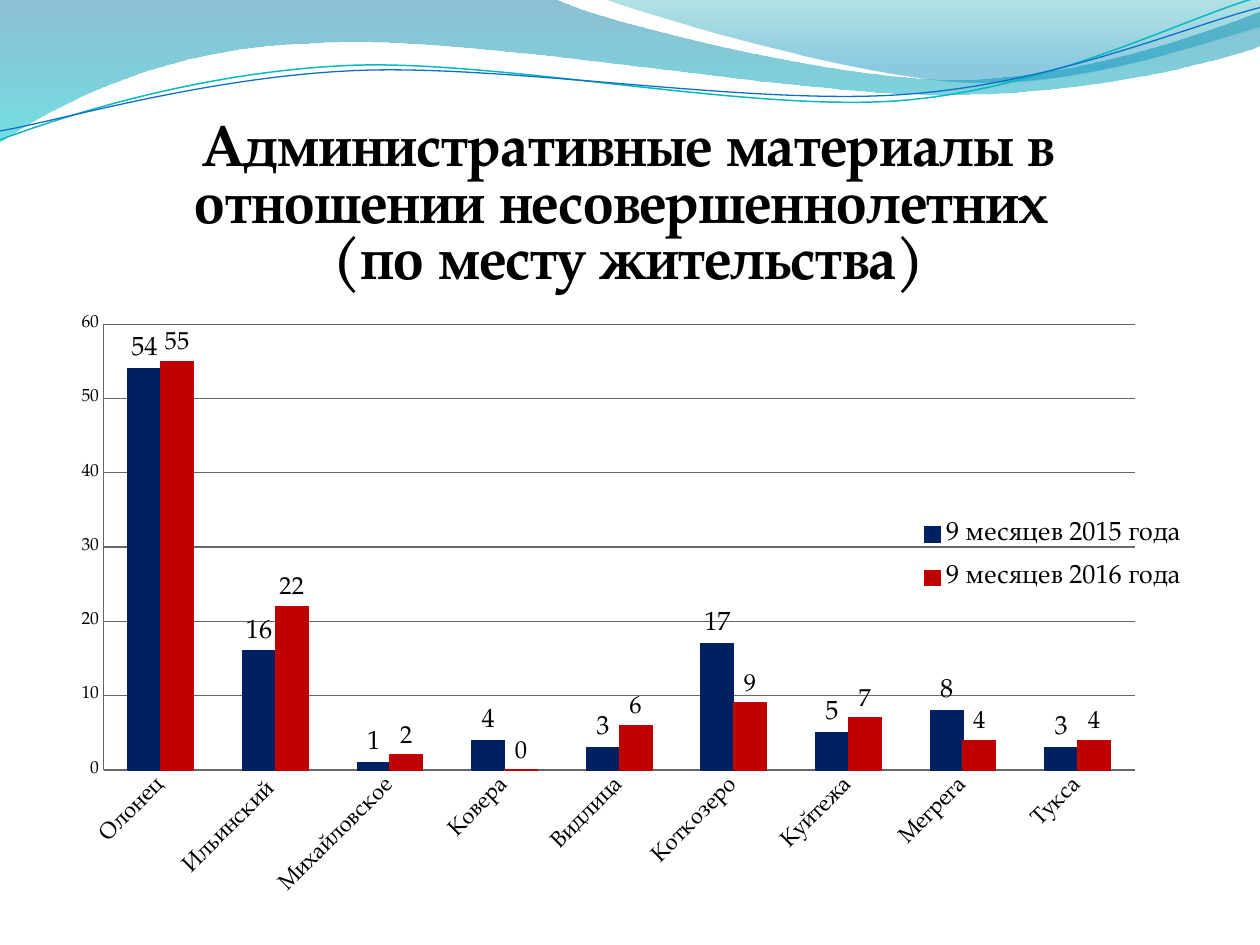
from dataclasses import dataclass
from lxml.etree import SubElement
from pptx import Presentation
from pptx.chart.data import CategoryChartData as Data
from pptx.dml.color import RGBColor as Rgb
from pptx.enum.chart import XL_CHART_TYPE as Kind, XL_LABEL_POSITION as Spot
from pptx.enum.chart import XL_LEGEND_POSITION as Side, XL_TICK_MARK as Tick
from pptx.oxml.ns import qn
from pptx.util import Cm, Pt

Point = tuple[float, float]


@dataclass(frozen=True)
class Theme:
    font: str = "TeX Gyre Pagella"
    ink: str = "000000"
    grid: str = "666666"
    title: int = 33
    key: int = 15
    names: int = 13
    scale: int = 10


@dataclass(frozen=True)
class Stop:
    at: float
    color: str
    alpha: int


@dataclass(frozen=True)
class Wave:
    """Outline in inches: one point is a line, three points are a curve."""
    start: Point
    steps: list[tuple[Point, ...]]
    stops: tuple[Stop, ...] = ()
    color: str = ""
    width: float = 0


@dataclass(frozen=True)
class Year:
    name: str
    vals: tuple[int, ...]
    color: str
    size: int


THEME = Theme()
WAVES = [
    Wave((0, 0), [
        ((4.4, -0.01),),
        ((4.76, 0.17), (6.64, 0.63), (7.58, 0.63)),
        ((8.53, 0.63), (9.58, 0.26), (10, 0.09)),
        ((10.01, 0.36),),
        ((9.83, 0.44), (8.7, 0.76), (7.46, 0.75)),
        ((6.22, 0.75), (3.82, 0.28), (2.57, 0.34)),
        ((1.29, 0.36), (0.46, 0.83), (-0.01, 1.13)),
    ], stops=(Stop(0, "0074A1", 45), Stop(1, "00C6CF", 55))),
    Wave((4.79, -0.01), [
        ((5.09, 0.11), (6.82, 0.62), (7.69, 0.65)),
        ((8.56, 0.69), (9.61, 0.32), (10, 0.21)),
        ((10, 0),),
    ], stops=(Stop(0, "00A1A9", 30), Stop(0.8, "008BBF", 45))),
    Wave((0, 1.11), [
        ((0.48, 0.93), (1.58, 0.57), (2.77, 0.52)),
        ((3.95, 0.47), (5.93, 0.89), (7.13, 0.8)),
        ((8.33, 0.71), (9.38, 0.15), (9.98, -0.02)),
    ], color="0AB8BF", width=0.85),
    Wave((0, 1.04), [
        ((0.47, 0.96), (1.64, 0.61), (2.83, 0.56)),
        ((4.03, 0.51), (5.97, 0.84), (7.17, 0.75)),
        ((8.36, 0.67), (9.41, 0.21), (10, 0.06)),
    ], color="0F6FC6", width=0.75),
]
TITLE = ("Административные материалы в отношении несовершеннолетних \n"
         "(по месту жительства)")
TOWNS = ["Олонец", "Ильинский ", "Михайловское", "Ковера", "Видлица",
         "Коткозеро", "Куйтежа", "Мегрега", "Тукса"]
YEARS = [
    Year("9 месяцев 2015 года", (54, 16, 1, 4, 3, 17, 5, 8, 3), "002060", 15),
    Year("9 месяцев 2016 года", (55, 22, 2, 0, 6, 9, 7, 4, 4), "C00000", 14),
]


def paint(color: str) -> Rgb:
    return Rgb.from_string(color)


def to_cm(point: Point) -> tuple[Cm, Cm]:
    x, y = point
    return Cm(x * 2.54), Cm(y * 2.54)


def bend(shape, steps: list[tuple[Point, ...]]) -> None:
    """Swap the straight segments for curves where a step has handles."""
    route = next(shape._element.iter(qn("a:path")))
    for node, step in zip(route.findall(qn("a:lnTo")), steps):
        if len(step) == 1:
            continue
        curve = SubElement(route, qn("a:cubicBezTo"))
        for x, y in map(to_cm, step):
            SubElement(curve, qn("a:pt"), x=str(x - shape.left),
                       y=str(y - shape.top))
        route.replace(node, curve)


def draw_wave(slide, wave: Wave) -> None:
    pen = slide.shapes.build_freeform(*to_cm(wave.start))
    pen.add_line_segments([to_cm(step[-1]) for step in wave.steps],
                          close=bool(wave.stops))
    shape = pen.convert_to_shape()
    bend(shape, wave.steps)
    shape.shadow.inherit = False
    if not wave.stops:
        shape.fill.background()
        shape.line.color.rgb = paint(wave.color)
        shape.line.width = Pt(wave.width)
        return
    shape.line.fill.background()
    shape.fill.gradient()
    shape.fill.gradient_angle = 270
    for slot, stop in zip(shape.fill.gradient_stops, wave.stops):
        slot.position = stop.at
        slot.color.rgb = paint(stop.color)
        tint = slot._gs.find(qn("a:srgbClr"))
        SubElement(tint, qn("a:alpha"), val=str(stop.alpha * 1000))


def place(node, index: int, box: tuple, inner: bool = False) -> None:
    """Fix a chart part at a box given as shares of the chart."""
    for old in node.findall(qn("c:layout")):
        node.remove(old)
    frame = SubElement(node, qn("c:layout"))
    node.insert(index, frame)
    manual = SubElement(frame, qn("c:manualLayout"))
    if inner:
        SubElement(manual, qn("c:layoutTarget"), val="inner")
    for tag in ("xMode", "yMode"):
        SubElement(manual, qn(f"c:{tag}"), val="edge")
    for tag, share in zip("xywh", box):
        SubElement(manual, qn(f"c:{tag}"), val=str(share))


def style_axes(chart) -> None:
    names, scale = chart.category_axis, chart.value_axis
    for axis, size in ((names, THEME.names), (scale, THEME.scale)):
        axis.major_tick_mark = axis.minor_tick_mark = Tick.NONE
        axis.tick_labels.font.size = Pt(size)
        axis.format.line.color.rgb = paint(THEME.grid)
        axis.format.line.width = Pt(0.75)
    turn = names._element.find(qn("c:txPr")).find(qn("a:bodyPr"))
    turn.set("rot", "-2700000")
    turn.set("vert", "horz")
    scale.minimum_scale, scale.maximum_scale, scale.major_unit = 0, 60, 10
    grid = scale.major_gridlines.format.line
    grid.color.rgb = paint(THEME.grid)
    grid.width = Pt(0.75)


def draw_chart(slide) -> None:
    data = Data()
    data.categories = TOWNS
    for year in YEARS:
        data.add_series(year.name, year.vals)
    chart = slide.shapes.add_chart(
        Kind.COLUMN_CLUSTERED, Cm(-0.05), Cm(1.92), Cm(25.45), Cm(16.61),
        data).chart
    chart.font.name = THEME.font
    chart.font.size = Pt(THEME.scale)
    chart.font.color.rgb = paint(THEME.ink)

    # Heading
    chart.has_title = True
    chart.chart_title.include_in_layout = False
    text = chart.chart_title.text_frame
    text.text = TITLE
    for line in text.paragraphs:
        line.font.name = THEME.font
        line.font.size = Pt(THEME.title)
        line.font.bold = True
        line.font.color.rgb = paint(THEME.ink)

    # Columns and their values
    plot = chart.plots[0]
    plot.gap_width, plot.overlap = 150, 0
    plot.vary_by_categories = False
    for bars, year in zip(plot.series, YEARS):
        bars.format.fill.solid()
        bars.format.fill.fore_color.rgb = paint(year.color)
        bars.format.line.color.rgb = paint(year.color)
        bars.format.line.width = Pt(0.75)
        labels = bars.data_labels
        labels.show_value = True
        labels.position = Spot.OUTSIDE_END
        labels.font.size = Pt(year.size)
        labels.font.name = THEME.font
        labels.font.color.rgb = paint(THEME.ink)
    style_axes(chart)

    # Legend and plot positions
    chart.has_legend = True
    chart.legend.position = Side.RIGHT
    chart.legend.include_in_layout = False
    chart.legend.font.size = Pt(THEME.key)
    place(chart.legend._element, 1, (0.726, 0.497, 0.22, 0.125))
    area = plot._element.getparent()
    place(area, 0, (0.084, 0.278, 0.817, 0.541), inner=True)


def main() -> None:
    deck = Presentation()
    deck.slide_width, deck.slide_height = Cm(25.4), Cm(19.05)
    slide = deck.slides.add_slide(deck.slide_layouts[6])
    # Waves along the top edge
    for wave in WAVES:
        draw_wave(slide, wave)
    draw_chart(slide)
    deck.save("out.pptx")


if __name__ == "__main__":
    main()
